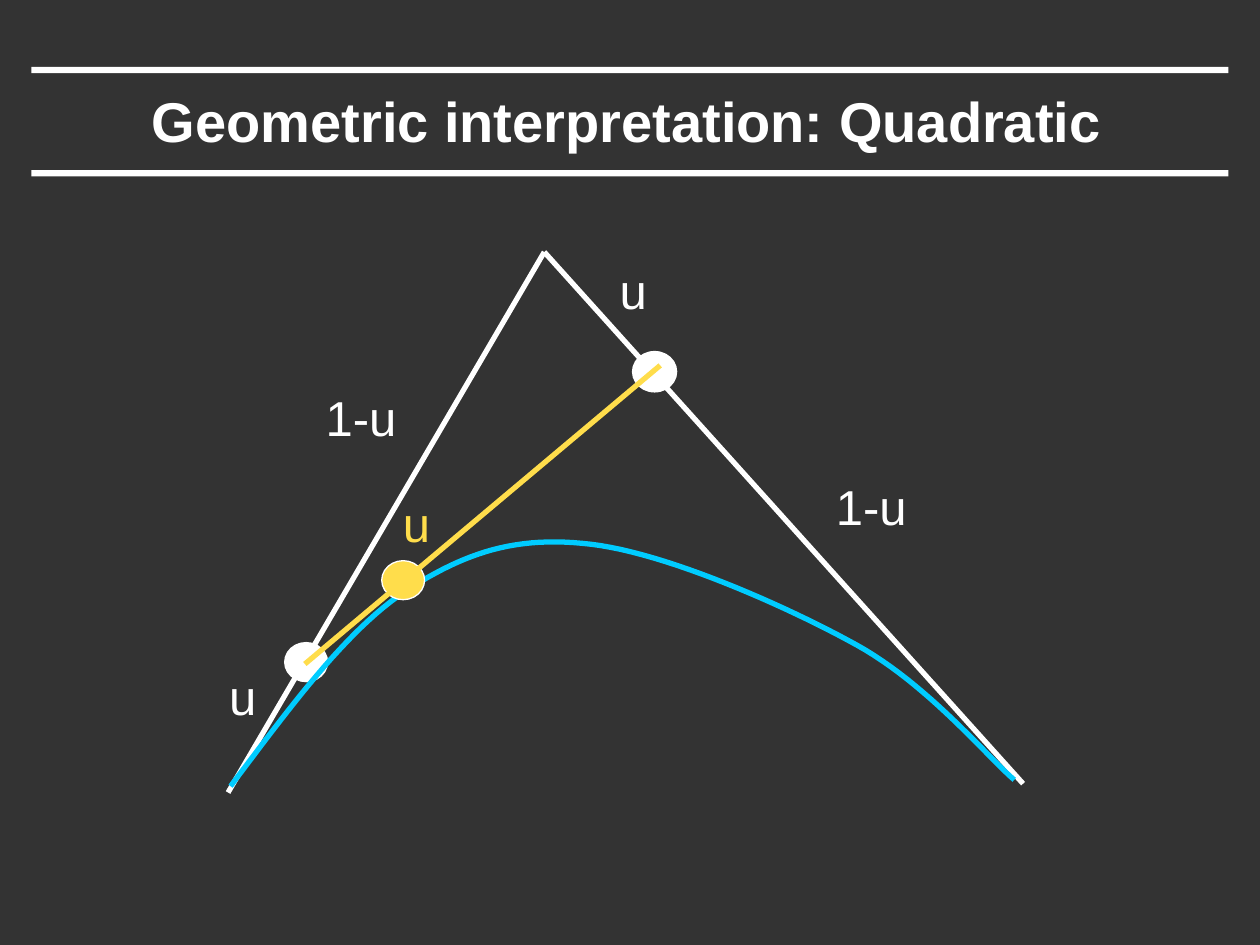
from dataclasses import dataclass

from lxml.etree import SubElement
from pptx import Presentation
from pptx.dml.color import RGBColor
from pptx.enum.shapes import MSO_CONNECTOR as Connector, MSO_SHAPE as Shape
from pptx.enum.text import MSO_ANCHOR as Anchor, MSO_AUTO_SIZE as AutoSize, PP_ALIGN as Align
from pptx.oxml.ns import qn
from pptx.util import Inches, Pt

COLORS = {"background": "333333", "white": "FFFFFF", "yellow": "FFDD4B", "cyan": "00CCFF"}
FONT = "Arial"
STROKE = 3
CURVE_STEPS = 24

Point = tuple[float, float]


@dataclass(frozen=True)
class Segment:
    start: Point
    end: Point
    color: str = "white"


@dataclass(frozen=True)
class Marker:
    left: float
    top: float
    width: float = 0.34
    height: float = 0.31
    color: str = "white"


@dataclass(frozen=True)
class Label:
    text: str
    left: float
    top: float
    width: float
    color: str = "white"


LEFT_END, APEX, RIGHT_END = (1.81, 6.29), (4.32, 2), (8.12, 6.22)
CONTROL_EDGES = [Segment(LEFT_END, APEX), Segment(APEX, RIGHT_END)]
INTERPOLATED_EDGE = Segment((2.42, 5.27), (5.24, 2.9), "yellow")
LEFT_MARKER = Marker(2.26, 5.1)
RIGHT_MARKER = Marker(5.02, 2.79, 0.35, 0.32)
CURVE_MARKER = Marker(3.03, 4.45, color="yellow")
LABELS = [
    Label("u", 3.1, 3.87, 0.4, "yellow"),
    Label("u", 1.72, 5.24, 0.4),
    Label("u", 4.82, 2.02, 0.4),
    Label("1-u", 2.47, 3.03, 0.79),
    Label("1-u", 6.52, 3.73, 0.79),
]
CURVE_START = (1.83, 6.24)
CURVE_PIECES = [
    ((2.29, 5.63), (2.74, 5.01), (3.22, 4.69)),
    ((3.7, 4.38), (4.1, 4.25), (4.69, 4.32)),
    ((5.29, 4.39), (6.24, 4.81), (6.8, 5.12)),
    ((7.36, 5.43), (7.84, 6.01), (8.05, 6.19)),
]


def rgb(color: str) -> RGBColor:
    return RGBColor.from_string(COLORS[color])


def write_text(frame, text: str, *, size: float, color: str, bold: bool = False) -> None:
    paragraph = frame.paragraphs[0]
    paragraph.alignment = Align.CENTER
    run = paragraph.add_run()
    run.text = text
    run.font.name = FONT
    run.font.size = Pt(size)
    run.font.bold = bold
    run.font.color.rgb = rgb(color)


def add_rule(slide, top: float) -> None:
    shape = slide.shapes.add_shape(
        Shape.RECTANGLE, Inches(0.25), Inches(top), Inches(9.5), Inches(0.05))
    shape.shadow.inherit = False
    shape.fill.solid()
    shape.fill.fore_color.rgb = rgb("white")
    shape.line.fill.background()


def add_title(slide, text: str) -> None:
    title = slide.shapes.title
    title.left, title.top = Inches(0.74), Inches(0.58)
    title.width, title.height = Inches(8.47), Inches(0.75)
    title.text_frame.vertical_anchor = Anchor.MIDDLE
    write_text(title.text_frame, text, size=32, color="white", bold=True)


def add_segment(slide, segment: Segment) -> None:
    connector = slide.shapes.add_connector(
        Connector.STRAIGHT, *map(Inches, segment.start + segment.end))
    connector.line.color.rgb = rgb(segment.color)
    connector.line.width = Pt(STROKE)
    SubElement(connector._element.spPr, qn("a:effectLst"))


def add_marker(slide, marker: Marker) -> None:
    shape = slide.shapes.add_shape(
        Shape.OVAL, Inches(marker.left), Inches(marker.top),
        Inches(marker.width), Inches(marker.height))
    shape.shadow.inherit = False
    shape.fill.solid()
    shape.fill.fore_color.rgb = rgb(marker.color)
    shape.line.color.rgb = rgb("white")
    shape.line.width = Pt(0.75)


def add_label(slide, label: Label) -> None:
    box = slide.shapes.add_textbox(
        Inches(label.left), Inches(label.top), Inches(label.width), Inches(0.57))
    box.text_frame.word_wrap = False
    box.text_frame.auto_size = AutoSize.SHAPE_TO_FIT_TEXT
    write_text(box.text_frame, label.text, size=28, color=label.color)


def bezier_point(controls: tuple[Point, ...], u: float) -> Point:
    while len(controls) > 1:
        controls = tuple(
            ((1 - u) * x1 + u * x2, (1 - u) * y1 + u * y2)
            for (x1, y1), (x2, y2) in zip(controls, controls[1:]))
    return controls[0]


def add_curve(slide) -> None:
    points, start = [], CURVE_START
    for piece in CURVE_PIECES:
        points += [bezier_point((start, *piece), step / CURVE_STEPS)
                   for step in range(1, CURVE_STEPS + 1)]
        start = piece[-1]
    builder = slide.shapes.build_freeform(*map(Inches, CURVE_START))
    builder.add_line_segments([(Inches(x), Inches(y)) for x, y in points], close=False)
    curve = builder.convert_to_shape()
    curve.shadow.inherit = False
    curve.fill.background()
    curve.line.color.rgb = rgb("cyan")
    curve.line.width = Pt(STROKE)


def main() -> None:
    presentation = Presentation()
    presentation.slide_width, presentation.slide_height = Inches(10), Inches(7.5)
    slide = presentation.slides.add_slide(presentation.slide_layouts.get_by_name("Title Only"))
    slide.background.fill.solid()
    slide.background.fill.fore_color.rgb = rgb("background")

    for top in (0.53, 1.35):
        add_rule(slide, top)
    add_title(slide, "Geometric interpretation: Quadratic")
    for edge in CONTROL_EDGES:
        add_segment(slide, edge)
    add_marker(slide, LEFT_MARKER)
    add_curve(slide)
    for marker in (CURVE_MARKER, RIGHT_MARKER):
        add_marker(slide, marker)
    add_segment(slide, INTERPOLATED_EDGE)
    for label in LABELS:
        add_label(slide, label)
    presentation.save("out.pptx")


if __name__ == "__main__":
    main()
